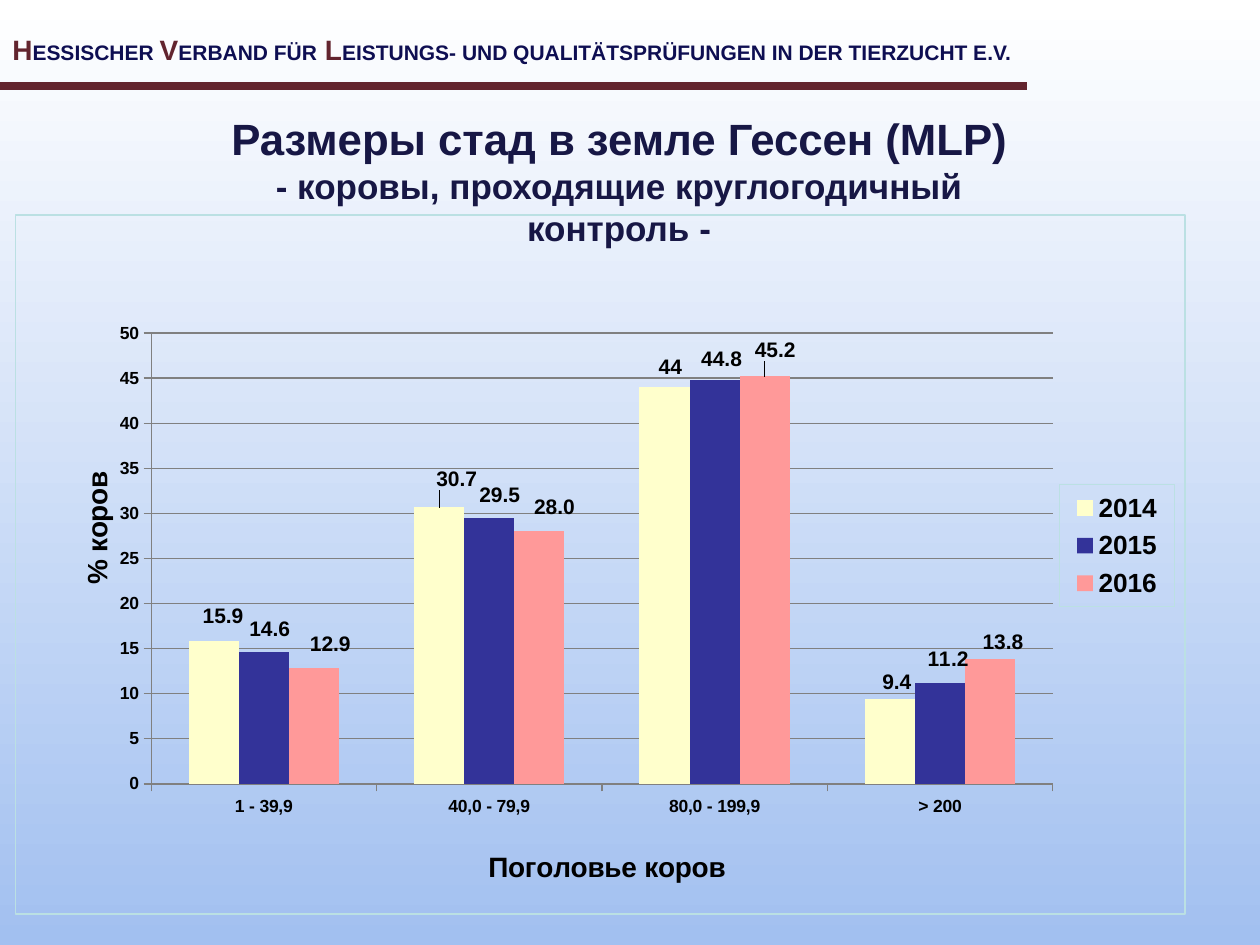
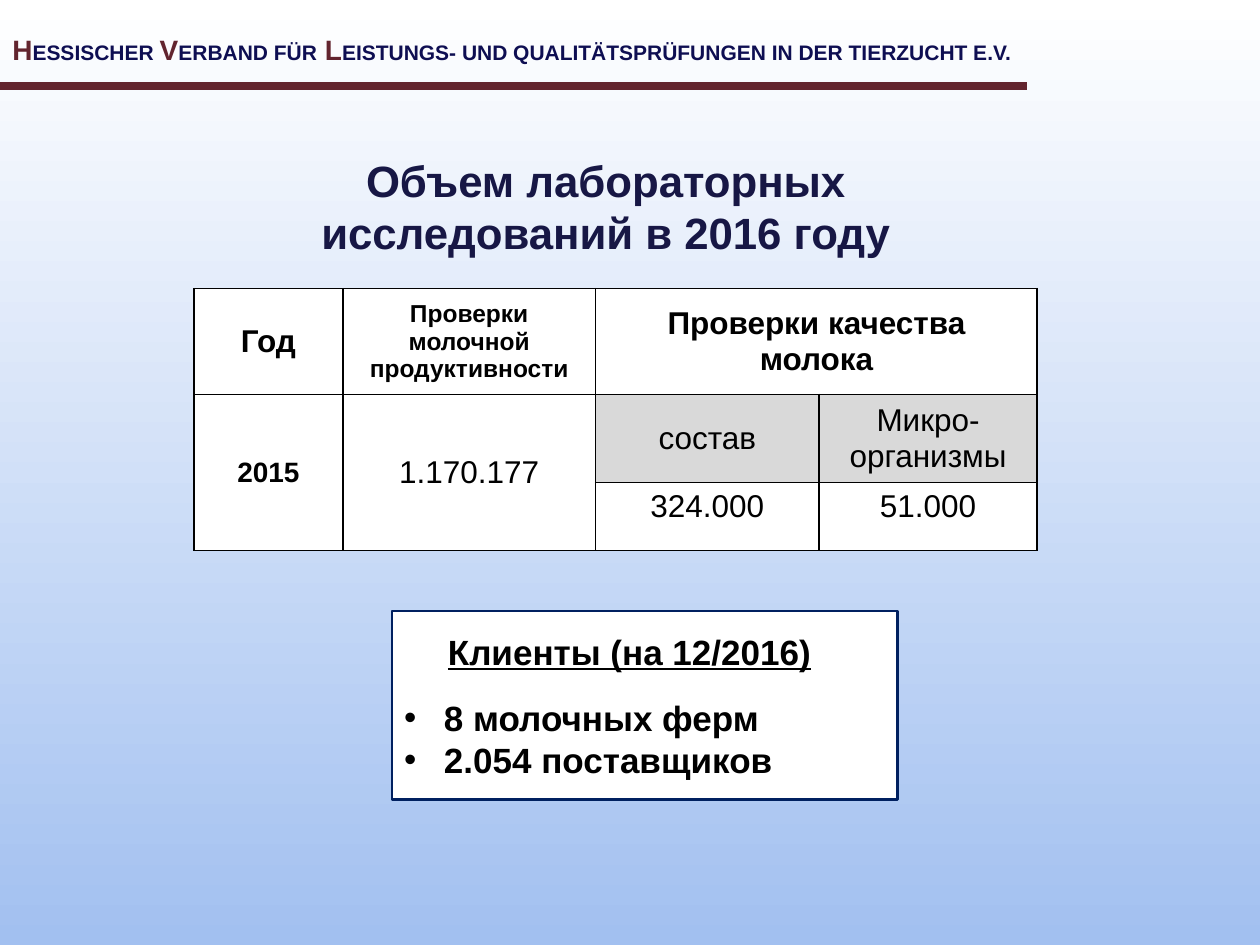
from lxml import etree
from pptx import Presentation
from pptx.chart.data import CategoryChartData
from pptx.dml.color import RGBColor
from pptx.enum.chart import XL_CHART_TYPE, XL_LABEL_POSITION, XL_LEGEND_POSITION, XL_TICK_MARK
from pptx.enum.shapes import MSO_CONNECTOR, MSO_SHAPE
from pptx.enum.text import MSO_ANCHOR, PP_ALIGN
from pptx.oxml.ns import qn
from pptx.util import Cm, Pt

FONT = "Arial"
CENTER, LEFT = PP_ALIGN.CENTER, PP_ALIGN.LEFT
MIDDLE, TOP = MSO_ANCHOR.MIDDLE, MSO_ANCHOR.TOP
OUTSIDE_END = XL_LABEL_POSITION.OUTSIDE_END

WHITE = RGBColor(0xFF, 0xFF, 0xFF)
BLACK = RGBColor(0, 0, 0)
SKY = RGBColor(0xA2, 0xC0, 0xF0)
MAROON = RGBColor(0x62, 0x24, 0x2E)
HEADER_NAVY = RGBColor(0x0E, 0x0E, 0x52)
TITLE_NAVY = RGBColor(0x17, 0x17, 0x45)
BOX_NAVY = RGBColor(0x00, 0x20, 0x60)
PALE_TEAL = RGBColor(0xBB, 0xE0, 0xE3)
GRID_GRAY = RGBColor(0x80, 0x80, 0x80)
CELL_GRAY = RGBColor(0xD9, 0xD9, 0xD9)

# Content
HEADER = [
    ("H", 16, MAROON), ("ESSISCHER ", 12, HEADER_NAVY),
    ("V", 16, MAROON), ("ERBAND FÜR", 12, HEADER_NAVY), (" ", 16, BLACK),
    ("L", 16, MAROON),
    ("EISTUNGS- UND QUALITÄTSPRÜFUNGEN IN DER TIERZUCHT E.V.", 12, HEADER_NAVY),
]
HERD_TITLE = [("Размеры стад в земле Гессен (MLP)", 25),
              ("- коровы, проходящие круглогодичный контроль -", 20)]
LAB_TITLE = [("Объем лабораторных исследований в 2016 году", 25)]

HERD_SIZES = ["1 - 39,9", "40,0 - 79,9", "80,0 - 199,9", "> 200"]
# Year, values, colour, number format, label shifts as fractions of the chart
HERD_SERIES = [
    ("2014", [15.9, 30.7, 44, 9.4], RGBColor(0xFF, 0xFF, 0xCC), "General",
     [(0.008, -0.011), (0.015, -0.017), (0.005, -0.006), (0.006, -0.001)]),
    ("2015", [14.6, 29.5, 44.8, 11.2], RGBColor(0x33, 0x33, 0x99), "General",
     [(0.005, -0.01), (0.009, -0.009), (0.006, -0.006), (0.007, -0.011)]),
    ("2016", [12.9, 28, 45.2, 13.8], RGBColor(0xFF, 0x99, 0x99), "0.0",
     [(0.014, -0.011), (0.013, -0.011), (0.009, -0.014), (0.011, -0.001)]),
]

COLUMN_WIDTHS = [3.0, 5.1, 4.5, 4.4]
ROW_HEIGHTS = [2.13, 1.78, 1.37]
# Row, column, text, size, bold, fill, anchor
LAB_CELLS = [
    (0, 0, "Год", 18, True, WHITE, MIDDLE),
    (0, 1, "Проверки молочной продуктивности", 14, True, WHITE, MIDDLE),
    (0, 2, "Проверки качества молока", 18, True, WHITE, MIDDLE),
    (1, 0, "2015", 16, True, WHITE, MIDDLE),
    (1, 1, "1.170.177", 18, False, WHITE, MIDDLE),
    (1, 2, "состав", 18, False, CELL_GRAY, MIDDLE),
    (1, 3, "Микро-организмы", 18, False, CELL_GRAY, MIDDLE),
    (2, 2, "324.000", 18, False, WHITE, TOP),
    (2, 3, "51.000", 18, False, WHITE, TOP),
]
MERGES = [((0, 2), (0, 3)), ((1, 0), (2, 0)), ((1, 1), (2, 1))]

CLIENTS_TITLE = "Клиенты (на 12/2016)"
CLIENTS = ["8 молочных ферм", "2.054 поставщиков"]


def box(left, top, width, height):
    return Cm(left), Cm(top), Cm(width), Cm(height)


def set_font(font, size, color=BLACK, bold=True):
    font.name = FONT
    font.size = Pt(size)
    font.bold = bold
    font.color.rgb = color


def add_text_box(slide, place):
    frame = slide.shapes.add_textbox(*place).text_frame
    frame.word_wrap = True
    return frame


def next_paragraph(frame, index):
    return frame.add_paragraph() if index else frame.paragraphs[0]


def add_slide(presentation, title, title_place):
    """Blank slide with gradient, association header, rule and title."""
    slide = presentation.slides.add_slide(presentation.slide_layouts[6])
    background = slide.background.fill
    background.gradient()
    background.gradient_angle = 270
    for stop, color in zip(background.gradient_stops, (WHITE, SKY)):
        stop.color.rgb = color

    header = add_text_box(slide, box(0, 0.53, 20.75, 0.94)).paragraphs[0]
    for text, size, color in HEADER:
        run = header.add_run()
        run.text = text
        set_font(run.font, size, color)

    rule = slide.shapes.add_connector(
        MSO_CONNECTOR.STRAIGHT, Cm(0), Cm(1.73), Cm(20.7), Cm(1.73))
    rule.line.color.rgb = MAROON
    rule.line.width = Pt(4.5)
    etree.SubElement(rule._element.spPr, qn("a:effectLst"))

    frame = add_text_box(slide, title_place)
    for index, (text, size) in enumerate(title):
        paragraph = next_paragraph(frame, index)
        paragraph.text = text
        paragraph.alignment = CENTER
        set_font(paragraph.font, size, TITLE_NAVY)
    return slide


# Chart helpers
def set_layout(parent, index, **values):
    """Place a chart part by fractions of the chart area."""
    for old_layout in parent.findall(qn("c:layout")):
        parent.remove(old_layout)
    layout = etree.Element(qn("c:layout"))
    manual = etree.SubElement(layout, qn("c:manualLayout"))
    for name, value in values.items():
        etree.SubElement(manual, qn("c:" + name)).set("val", str(value))
    parent.insert(index, layout)


def add_border(parent):
    properties = etree.Element(qn("c:spPr"))
    etree.SubElement(properties, qn("a:noFill"))
    line = etree.SubElement(properties, qn("a:ln"), w=str(Pt(0.75)))
    fill = etree.SubElement(line, qn("a:solidFill"))
    etree.SubElement(fill, qn("a:srgbClr"), val=str(PALE_TEAL))
    parent.find(qn("c:txPr")).addprevious(properties)


def style_axis(axis, title, x, y):
    axis.major_tick_mark = XL_TICK_MARK.OUTSIDE
    axis.format.line.color.rgb = GRID_GRAY
    set_font(axis.tick_labels.font, 10)
    frame = axis.axis_title.text_frame
    frame.text = title
    set_font(frame.paragraphs[0].font, 16)
    set_layout(axis.axis_title._element, 1, xMode="edge", yMode="edge", x=x, y=y)


def label_points(series, number_format, shifts):
    for index, (x, y) in enumerate(shifts):
        label = series.points[index].data_label
        set_font(label.font, 12)
        label.position = OUTSIDE_END
    labels = series.data_labels
    labels.show_value = True
    labels.number_format = number_format
    labels.number_format_is_linked = False
    set_font(labels.font, 12)
    for element, (x, y) in zip(labels._element.findall(qn("c:dLbl")), shifts):
        set_layout(element, 1, x=x, y=y)
        element.insert(2, etree.Element(
            qn("c:numFmt"), formatCode=number_format, sourceLinked="0"))


def add_herd_chart(slide):
    data = CategoryChartData()
    data.categories = HERD_SIZES
    for year, values, *_ in HERD_SERIES:
        data.add_series(year, values)
    chart = slide.shapes.add_chart(
        XL_CHART_TYPE.COLUMN_CLUSTERED, *box(0.3, 4.32, 23.6, 14.12), data).chart
    set_font(chart.font, 10)
    chart.has_title = False
    add_border(chart._chartSpace)
    set_layout(chart._chartSpace.chart.plotArea, 0, layoutTarget="inner",
               xMode="edge", yMode="edge", x=0.116, y=0.169, w=0.771, h=0.645)

    plot = chart.plots[0]
    plot.gap_width = 150
    plot.overlap = 0
    plot.vary_by_categories = False
    for series, (_, _, color, number_format, shifts) in zip(plot.series, HERD_SERIES):
        series.format.fill.solid()
        series.format.fill.fore_color.rgb = color
        series.invert_if_negative = False
        label_points(series, number_format, shifts)

    style_axis(chart.category_axis, "Поголовье коров", 0.4, 0.9)
    value_axis = chart.value_axis
    style_axis(value_axis, "% коров", 0.05, 0.36)
    body = value_axis.axis_title._element.find(".//" + qn("a:bodyPr"))
    body.set("rot", "-5400000")
    body.set("vert", "horz")
    value_axis.minimum_scale, value_axis.maximum_scale = 0, 50
    value_axis.major_unit = 5
    value_axis.major_gridlines.format.line.color.rgb = GRID_GRAY

    chart.has_legend = True
    legend = chart.legend
    legend.position = XL_LEGEND_POSITION.RIGHT
    legend.include_in_layout = False
    set_font(legend.font, 15)
    add_border(legend._element)
    set_layout(legend._element, 1, xMode="edge", yMode="edge",
               x=0.893, y=0.386, w=0.098, h=0.174)


# Table and client box
def add_cell_borders(cell):
    properties = cell._tc.get_or_add_tcPr()
    for index, side in enumerate(("a:lnL", "a:lnR", "a:lnT", "a:lnB")):
        line = etree.Element(qn(side), w=str(Pt(1)))
        fill = etree.SubElement(line, qn("a:solidFill"))
        etree.SubElement(fill, qn("a:srgbClr"), val=str(BLACK))
        properties.insert(index, line)


def add_lab_table(slide):
    place = box(3.91, 5.82, sum(COLUMN_WIDTHS), sum(ROW_HEIGHTS))
    table = slide.shapes.add_table(
        len(ROW_HEIGHTS), len(COLUMN_WIDTHS), *place).table
    table.first_row = table.horz_banding = False
    for column, width in zip(table.columns, COLUMN_WIDTHS):
        column.width = Cm(width)
    for row, height in zip(table.rows, ROW_HEIGHTS):
        row.height = Cm(height)
    for first, last in MERGES:
        table.cell(*first).merge(table.cell(*last))
    for cell in table.iter_cells():
        cell.fill.solid()
        cell.fill.fore_color.rgb = WHITE
        add_cell_borders(cell)
    for row, column, text, size, bold, fill, anchor in LAB_CELLS:
        cell = table.cell(row, column)
        cell.text = text
        cell.fill.fore_color.rgb = fill
        cell.vertical_anchor = anchor
        paragraph = cell.text_frame.paragraphs[0]
        paragraph.alignment = CENTER
        set_font(paragraph.font, size, bold=bold)


def add_client_box(slide):
    shape = slide.shapes.add_shape(MSO_SHAPE.RECTANGLE, *box(7.9, 12.32, 10.2, 3.8))
    shape.shadow.inherit = False
    shape.fill.solid()
    shape.fill.fore_color.rgb = WHITE
    shape.line.color.rgb = BOX_NAVY
    shape.line.width = Pt(1.5)
    frame = shape.text_frame
    frame.vertical_anchor = MIDDLE
    for index, text in enumerate([CLIENTS_TITLE, *CLIENTS]):
        paragraph = next_paragraph(frame, index)
        paragraph.text = text
        paragraph.alignment = LEFT
        properties = paragraph._p.get_or_add_pPr()
        if index == 0:
            properties.set("marL", str(Cm(0.88)))
        else:
            properties.set("marL", str(Cm(0.8)))
            properties.set("indent", str(-Cm(0.8)))
            if index == 1:
                paragraph.space_before = Pt(14)
            etree.SubElement(properties, qn("a:buFont"), typeface=FONT)
            etree.SubElement(properties, qn("a:buChar"), char="•")
        set_font(paragraph.font, 20)
        paragraph.font.underline = index == 0


def main():
    presentation = Presentation()
    presentation.slide_width, presentation.slide_height = Cm(25.4), Cm(19.05)

    herd_slide = add_slide(presentation, HERD_TITLE, box(3.68, 2.13, 17.6, 3.02))
    add_herd_chart(herd_slide)

    lab_slide = add_slide(presentation, LAB_TITLE, box(3.91, 2.97, 16.6, 2.39))
    add_client_box(lab_slide)
    add_lab_table(lab_slide)

    presentation.save("out.pptx")


if __name__ == "__main__":
    main()
